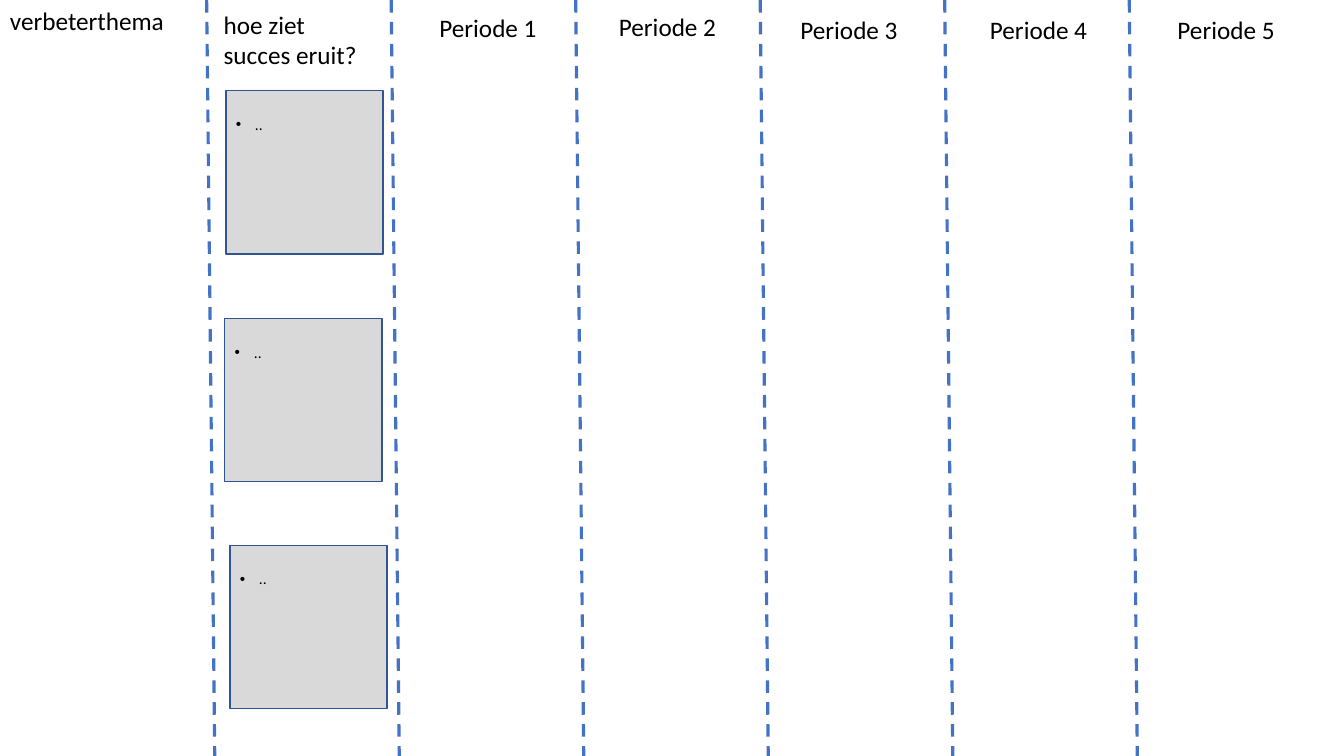
from typing import NamedTuple

from lxml.etree import SubElement
from pptx import Presentation
from pptx.dml.color import RGBColor
from pptx.enum.dml import MSO_LINE
from pptx.enum.shapes import MSO_CONNECTOR, MSO_SHAPE
from pptx.enum.text import MSO_ANCHOR, MSO_AUTO_SIZE, PP_ALIGN
from pptx.oxml.ns import qn
from pptx.slide import Slide
from pptx.text.text import _Paragraph
from pptx.util import Inches, Pt

SLIDE_W, SLIDE_H = 13.33, 7.5
DIVIDER_COUNT, DIVIDER_LEFT, DIVIDER_STEP, DIVIDER_SLANT = 6, 2.05, 1.83, 0.08
BOX_W, BOX_H = 1.56, 1.62
BULLET_INDENT = 0.19


class Heading(NamedTuple):
    """Column heading with its place and wrapping."""

    text: str
    left: float
    top: float
    width: float = 1.18
    height: float = 0.4
    wrap: bool = False


class SuccessBox(NamedTuple):
    """Top left corner of a grey box for success criteria."""

    left: float
    top: float


PERIOD_PLACES = [(4.26, 0.07), (6.04, 0.06), (7.84, 0.09), (9.72, 0.09), (11.58, 0.09)]
HEADINGS = [
    Heading("verbeterthema", 0, 0, 1.75),
    Heading("hoe ziet succes eruit?", 2.12, 0.04, 1.6, 0.71, True),
    *(Heading(f"Periode {n}", left, top) for n, (left, top) in enumerate(PERIOD_PLACES, 1)),
]
BOXES = [SuccessBox(2.24, 0.9), SuccessBox(2.23, 3.16), SuccessBox(2.28, 5.41)]


def color(value: str) -> RGBColor:
    """Turn a hex string into a colour."""
    return RGBColor.from_string(value)


def write(p: _Paragraph, text: str, size: float) -> None:
    """Write one left-aligned black run."""
    p.alignment = PP_ALIGN.LEFT
    r = p.add_run()
    r.text = text
    for name, value in {"name": "Calibri", "size": Pt(size)}.items():
        setattr(r.font, name, value)
    r.font.color.rgb = color("000000")


def add_bullet(p: _Paragraph) -> None:
    """Give a paragraph a round bullet with a hanging indent."""
    pPr = p._p.get_or_add_pPr()
    pPr.set("marL", str(Inches(BULLET_INDENT)))
    pPr.set("indent", str(-Inches(BULLET_INDENT)))
    SubElement(pPr, qn("a:buFont"), typeface="Arial")
    SubElement(pPr, qn("a:buChar"), char="•")


def add_divider(s: Slide, left: float) -> None:
    """Draw a slightly slanted dashed line between two columns."""
    line = s.shapes.add_connector(
        MSO_CONNECTOR.STRAIGHT,
        Inches(left), Inches(0), Inches(left + DIVIDER_SLANT), Inches(SLIDE_H),
    )
    line.line.color.rgb = color("4472C4")
    for name, value in {"width": Pt(2.25), "dash_style": MSO_LINE.DASH}.items():
        setattr(line.line, name, value)
    SubElement(line._element.spPr, qn("a:effectLst"))


def add_heading(s: Slide, heading: Heading) -> None:
    """Place a column heading."""
    sp = s.shapes.add_textbox(
        Inches(heading.left), Inches(heading.top), Inches(heading.width), Inches(heading.height)
    )
    tf = sp.text_frame
    tf.word_wrap = heading.wrap
    tf.auto_size = MSO_AUTO_SIZE.SHAPE_TO_FIT_TEXT
    write(tf.paragraphs[0], heading.text, 18)


def add_success_box(s: Slide, box: SuccessBox) -> None:
    """Draw a grey box with one open bullet."""
    sp = s.shapes.add_shape(
        MSO_SHAPE.RECTANGLE, Inches(box.left), Inches(box.top), Inches(BOX_W), Inches(BOX_H)
    )
    sp.shadow.inherit = False
    sp.fill.solid()
    sp.fill.fore_color.rgb = color("D9D9D9")
    sp.line.color.rgb = color("325491")
    sp.line.width = Pt(1)
    tf = sp.text_frame
    frame = {"word_wrap": True, "vertical_anchor": MSO_ANCHOR.TOP, "margin_top": Inches(0.24)}
    for name, value in frame.items():
        setattr(tf, name, value)
    p = tf.paragraphs[0]
    write(p, "..", 11)
    add_bullet(p)


def main() -> None:
    """Build the improvement planning slide."""
    prs = Presentation()
    prs.slide_width, prs.slide_height = Inches(SLIDE_W), Inches(SLIDE_H)
    s = prs.slides.add_slide(prs.slide_layouts[6])
    for i in range(DIVIDER_COUNT):
        add_divider(s, DIVIDER_LEFT + i * DIVIDER_STEP)
    for heading in HEADINGS:
        add_heading(s, heading)
    for box in BOXES:
        add_success_box(s, box)
    prs.save("out.pptx")


if __name__ == "__main__":
    main()
